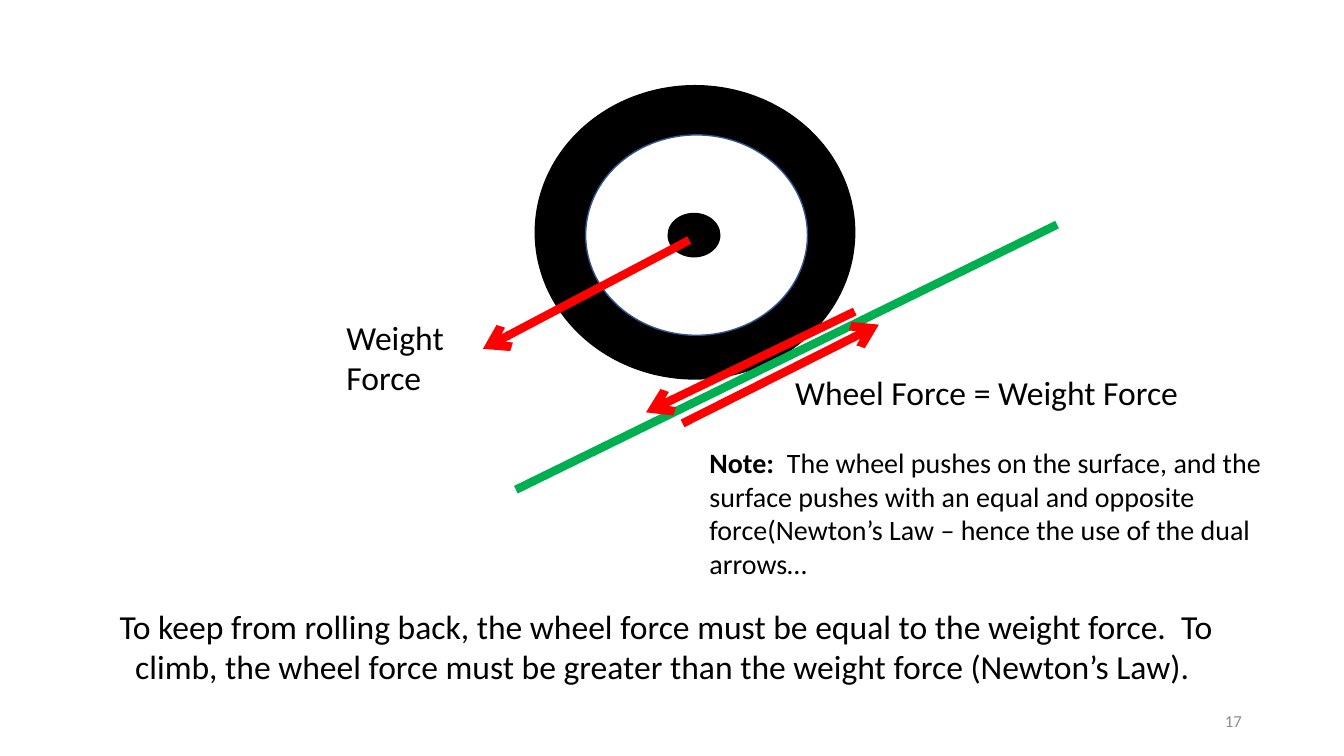
"""Build a slide on the forces acting on a wheel that climbs a slope."""
from dataclasses import dataclass

from lxml.etree import SubElement
from pptx import Presentation
from pptx.dml.color import RGBColor
from pptx.enum.shapes import MSO_CONNECTOR, MSO_SHAPE
from pptx.enum.text import MSO_ANCHOR as Anchor, PP_ALIGN as Align
from pptx.oxml.ns import qn
from pptx.slide import Slide
from pptx.util import Cm, Pt

BLACK = RGBColor(0x00, 0x00, 0x00)
WHITE = RGBColor(0xFF, 0xFF, 0xFF)
BLUE = RGBColor(0x32, 0x54, 0x91)
GREEN = RGBColor(0x00, 0xB0, 0x50)
RED = RGBColor(0xFF, 0x00, 0x00)
GRAY = RGBColor(0x8C, 0x8C, 0x8C)
FONT_NAME = "Calibri"


@dataclass(frozen=True)
class Disc:
    left: float
    top: float
    width: float
    height: float
    fill: RGBColor
    outline: RGBColor


@dataclass(frozen=True)
class Line:
    start: tuple[float, float]
    end: tuple[float, float]
    color: RGBColor = RED
    arrow: bool = True


@dataclass(frozen=True)
class Label:
    left: float
    top: float
    width: float
    height: float
    text: str
    size: int = 24
    lead: str = ""
    color: RGBColor = BLACK
    align: Align = Align.LEFT
    anchor: Anchor = Anchor.TOP


WHEEL = (
    Disc(13.49, 2.16, 8.05, 7.39, BLACK, BLACK),
    Disc(14.76, 3.4, 5.59, 5.05, WHITE, BLUE),
    Disc(16.84, 5.38, 1.3, 1.09, BLACK, BLACK),
)
SLOPE = Line((13, 12.34), (26.64, 5.66), GREEN, arrow=False)
WEIGHT_FORCE = Line((17.37, 6.05), (12.17, 8.79))
SURFACE_FORCE = Line((17.2, 10.67), (22.15, 8.18))
WHEEL_FORCE = Line((21.54, 7.85), (16.28, 10.39))
LABELS = (
    Label(8.48, 7.85, 3.51, 2.31, "Weight Force"),
    Label(19.79, 9.25, 12.65, 1.27, "Wheel Force = Weight Force"),
    Label(17.63, 11.1, 14.76, 3.68,
          "  The wheel pushes on the surface, and the surface pushes with an equal "
          "and opposite force(Newton’s Law – hence the use of the dual arrows…",
          size=20, lead="Note:"),
    Label(2.67, 15.14, 28.24, 2.31,
          "To keep from rolling back, the wheel force must be equal to the weight "
          "force.  To climb, the wheel force must be greater than the weight force "
          "(Newton’s Law). ",
          align=Align.CENTER),
    Label(23.93, 17.65, 7.62, 1.02, "17", size=12, color=GRAY,
          align=Align.RIGHT, anchor=Anchor.MIDDLE),
)


def draw_disc(slide: Slide, disc: Disc) -> None:
    shape = slide.shapes.add_shape(
        MSO_SHAPE.OVAL, Cm(disc.left), Cm(disc.top), Cm(disc.width), Cm(disc.height))
    shape.shadow.inherit = False
    shape.fill.solid()
    shape.fill.fore_color.rgb = disc.fill
    shape.line.color.rgb = disc.outline
    shape.line.width = Pt(1)


def draw_line(slide: Slide, line: Line) -> None:
    connector = slide.shapes.add_connector(
        MSO_CONNECTOR.STRAIGHT, *map(Cm, line.start + line.end))
    connector.line.color.rgb = line.color
    connector.line.width = Pt(6)
    if line.arrow:
        SubElement(connector.line._get_or_add_ln(), qn("a:tailEnd"), type="arrow")
    SubElement(connector._element.spPr, qn("a:effectLst"))


def draw_label(slide: Slide, label: Label) -> None:
    box = slide.shapes.add_textbox(
        Cm(label.left), Cm(label.top), Cm(label.width), Cm(label.height))
    frame = box.text_frame
    frame.word_wrap = True
    frame.vertical_anchor = label.anchor
    paragraph = frame.paragraphs[0]
    paragraph.alignment = label.align
    paragraph.font.name = FONT_NAME
    paragraph.font.size = Pt(label.size)
    paragraph.font.color.rgb = label.color
    if label.lead:
        lead = paragraph.add_run()
        lead.text = label.lead
        lead.font.bold = True
    paragraph.add_run().text = label.text


def main() -> None:
    presentation = Presentation()
    presentation.slide_width = Cm(33.87)
    presentation.slide_height = Cm(19.05)
    slide = presentation.slides.add_slide(presentation.slide_layouts[6])
    for disc in WHEEL:
        draw_disc(slide, disc)
    for line in (SLOPE, WEIGHT_FORCE, SURFACE_FORCE, WHEEL_FORCE):
        draw_line(slide, line)
    for label in LABELS:
        draw_label(slide, label)
    presentation.save("out.pptx")


if __name__ == "__main__":
    main()
